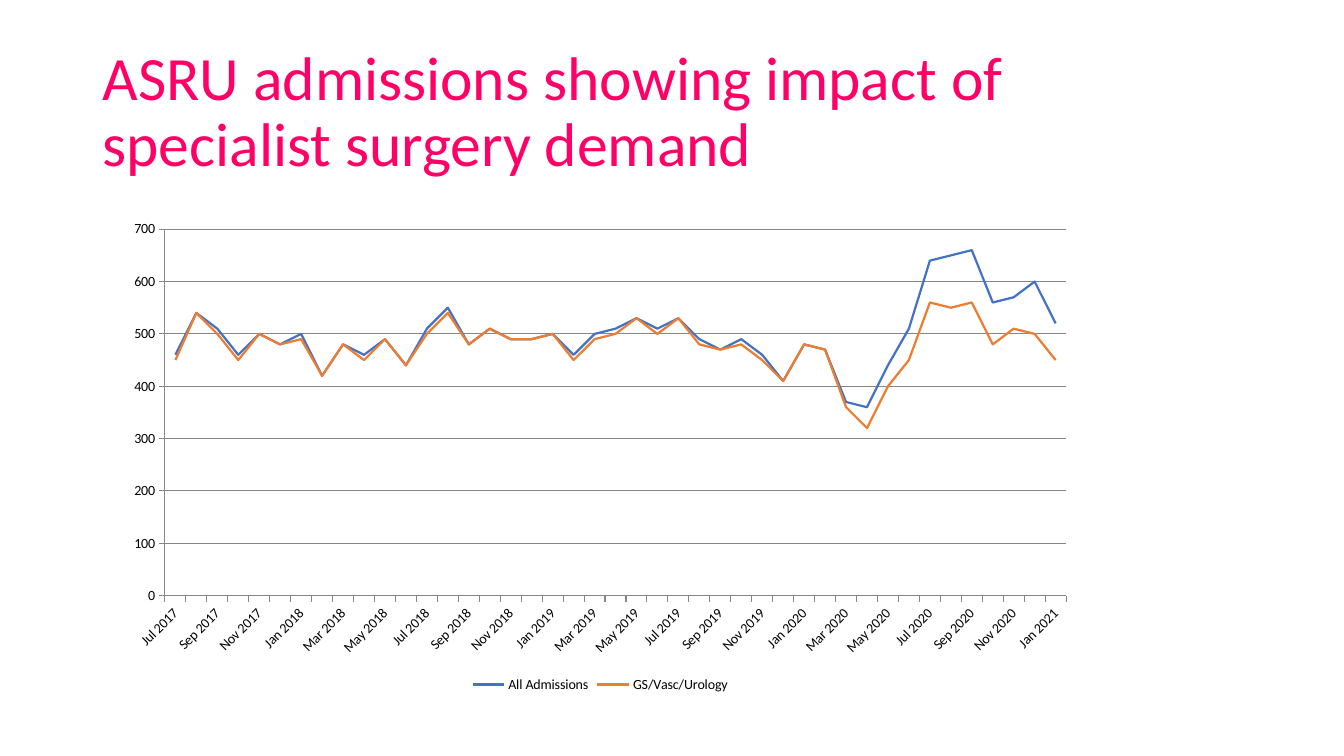
from dataclasses import dataclass

from lxml.etree import SubElement
from pptx import Presentation
from pptx.chart.axis import CategoryAxis, ValueAxis
from pptx.chart.data import CategoryChartData
from pptx.dml.color import RGBColor
from pptx.enum.chart import XL_CHART_TYPE, XL_LEGEND_POSITION, XL_TICK_MARK
from pptx.enum.text import MSO_ANCHOR, MSO_AUTO_SIZE, PP_ALIGN
from pptx.oxml.ns import qn
from pptx.util import Pt

FONT = "Calibri"
PINK = RGBColor(0xFF, 0x00, 0x66)
BLACK = RGBColor(0x00, 0x00, 0x00)
GREY = RGBColor(0x87, 0x87, 0x87)
BLUE = RGBColor(0x44, 0x72, 0xC4)
ORANGE = RGBColor(0xED, 0x7D, 0x31)


@dataclass
class Admissions:
    name: str
    color: RGBColor
    values: list[int]


SERIES = [
    Admissions("All Admissions", BLUE, [
        460, 540, 510, 460, 500, 480,
        500, 420, 480, 460, 490, 440, 510, 550, 480, 510, 490, 490,
        500, 460, 500, 510, 530, 510, 530, 490, 470, 490, 460, 410,
        480, 470, 370, 360, 440, 510, 640, 650, 660, 560, 570, 600,
        520]),
    Admissions("GS/Vasc/Urology", ORANGE, [
        450, 540, 500, 450, 500, 480,
        490, 420, 480, 450, 490, 440, 500, 540, 480, 510, 490, 490,
        500, 450, 490, 500, 530, 500, 530, 480, 470, 480, 450, 410,
        480, 470, 360, 320, 400, 450, 560, 550, 560, 480, 510, 500,
        450]),
]

# Months run from July 2017 to January 2021
MONTHS = "Jan Feb Mar Apr May Jun Jul Aug Sep Oct Nov Dec".split()
FIRST_YEAR, FIRST_MONTH = 2017, 6


def month_label(index: int) -> str:
    years, month = divmod(FIRST_MONTH + index, 12)
    return f"{MONTHS[month]} {FIRST_YEAR + years}"


def format_axis(axis: CategoryAxis | ValueAxis) -> None:
    axis.major_tick_mark = XL_TICK_MARK.OUTSIDE
    axis.minor_tick_mark = XL_TICK_MARK.NONE
    axis.format.line.color.rgb = GREY
    axis.format.line.width = Pt(0.75)
    axis.tick_labels.font.size = Pt(10)


prs = Presentation()
prs.slide_width, prs.slide_height = Pt(960), Pt(540)
s = prs.slides.add_slide(prs.slide_layouts[5])

# Title
title = s.shapes.title
title.left, title.top, title.width, title.height = Pt(66), Pt(28.75), Pt(828), Pt(104.4)
tf = title.text_frame
tf.text = "ASRU admissions showing impact of specialist surgery demand"
tf.auto_size = MSO_AUTO_SIZE.NONE
tf.vertical_anchor = MSO_ANCHOR.MIDDLE
p = tf.paragraphs[0]
p.alignment = PP_ALIGN.LEFT
p.line_spacing = 0.9
p.font.name, p.font.size = FONT, Pt(44)
p.font.color.rgb = PINK

# Line chart
data = CategoryChartData(number_format="###0")
data.categories = [month_label(i) for i in range(len(SERIES[0].values))]
for item in SERIES:
    data.add_series(item.name, item.values)
chart = s.shapes.add_chart(XL_CHART_TYPE.LINE, Pt(82), Pt(151.2),
                           Pt(693.4), Pt(346.3), data).chart
chart.has_title = False
chart.font.name, chart.font.size = FONT, Pt(10)
chart.font.color.rgb = BLACK
chart.plots[0].vary_by_categories = False
for line, item in zip(chart.plots[0].series, SERIES):
    line.smooth = False
    line.format.line.color.rgb = item.color
    line.format.line.width = Pt(1.6)

# Axes
months, counts = chart.category_axis, chart.value_axis
format_axis(months)
format_axis(counts)
labels = months.tick_labels
labels.number_format, labels.number_format_is_linked = "General", False
body = months._element.find(qn("c:txPr")).find(qn("a:bodyPr"))
body.set("rot", "-2700000")
body.set("vert", "horz")

counts.minimum_scale, counts.maximum_scale, counts.major_unit = 0, 700, 100
labels = counts.tick_labels
labels.number_format, labels.number_format_is_linked = "###0", False
counts.has_major_gridlines = True
grid = counts.major_gridlines.format.line
grid.color.rgb, grid.width = GREY, Pt(0.75)

# Legend
chart.has_legend = True
chart.legend.position = XL_LEGEND_POSITION.BOTTOM
chart.legend.include_in_layout = False
chart.legend.font.size = Pt(10)

prs.save("out.pptx")
